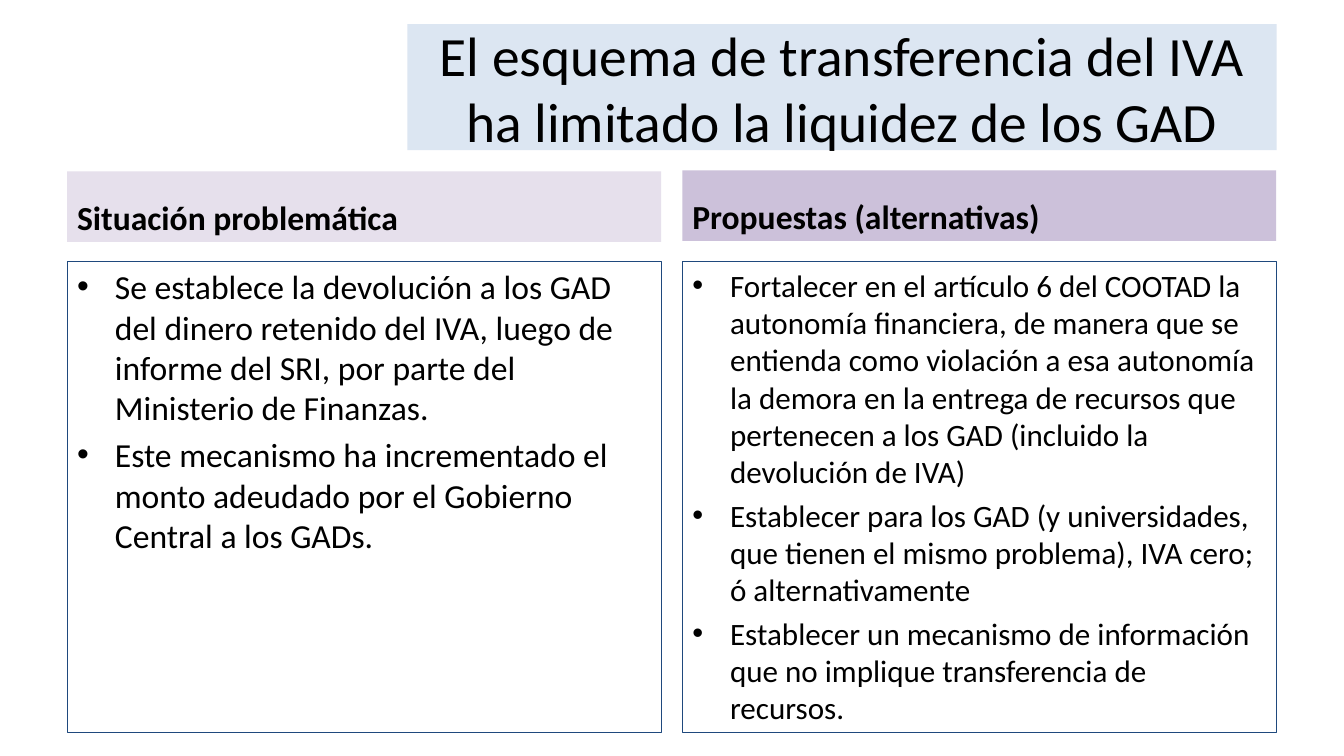
from lxml import etree
from pptx import Presentation
from pptx.dml.color import RGBColor
from pptx.enum.shapes import MSO_SHAPE
from pptx.enum.text import MSO_ANCHOR, PP_ALIGN
from pptx.oxml.ns import qn
from pptx.util import Pt

RECT = MSO_SHAPE.RECTANGLE
TOP, MIDDLE, BOTTOM = MSO_ANCHOR.TOP, MSO_ANCHOR.MIDDLE, MSO_ANCHOR.BOTTOM
LEFT, CENTER = PP_ALIGN.LEFT, PP_ALIGN.CENTER

# Content
TITLE = "El esquema de transferencia del IVA ha limitado la liquidez de los GAD"
COLUMNS = [
    {
        "head": "Situación problemática",
        "fill": "lilac",
        "top": 122.4,
        "size": "body",
        "items": [
            "Se establece la devolución a los GAD del dinero retenido del IVA, "
            "luego de informe del SRI, por parte del Ministerio de Finanzas.",
            "Este mecanismo ha incrementado el monto adeudado por el Gobierno "
            "Central a los GADs.",
        ],
    },
    {
        "head": "Propuestas (alternativas)",
        "fill": "purple",
        "top": 121.7,
        "size": "dense",
        "items": [
            "Fortalecer en el artículo 6 del COOTAD la autonomía financiera, de "
            "manera que se entienda como violación a esa autonomía la demora en "
            "la entrega de recursos que pertenecen a los GAD (incluido la "
            "devolución de IVA)",
            "Establecer para los GAD (y universidades, que tienen el mismo "
            "problema), IVA cero; ó alternativamente",
            "Establecer un mecanismo de información que no implique "
            "transferencia de recursos.",
        ],
    },
]

# Theme
THEME = {
    "font": "Calibri",
    "color": {"ink": "000000", "sky": "DCE6F2", "lilac": "E6E0EC",
              "purple": "CCC1DA", "navy": "1F497D"},
    "size": {"title": 39.6, "head": 24, "body": 24, "dense": 22.2},
}

# Layout, in points
MARGIN, WIDTH, PITCH = 48, 424.2, 439.4
HEAD_H, BODY_TOP, BODY_H = 50.4, 186.6, 336.9
INDENT = 27


def color(name):
    return RGBColor.from_string(THEME["color"][name])


def add_bullet(para):
    props = para._p.get_or_add_pPr()
    props.set("marL", str(Pt(INDENT)))
    props.set("indent", str(-Pt(INDENT)))
    font = etree.SubElement(props, qn("a:buFont"))
    font.set("typeface", "Arial")
    etree.SubElement(props, qn("a:buChar")).set("char", "•")


def add_text(slide, box, lines, size, fill=None, line=None, anchor=TOP,
             align=LEFT, bold=False, bullet=False):
    shape = slide.shapes.add_shape(RECT, *[Pt(v) for v in box])
    shape.shadow.inherit = False
    if fill:
        shape.fill.solid()
        shape.fill.fore_color.rgb = color(fill)
    else:
        shape.fill.background()
    if line:
        shape.line.color.rgb = color(line)
        shape.line.width = Pt(0.75)
    else:
        shape.line.fill.background()
    frame = shape.text_frame
    frame.word_wrap = True
    frame.vertical_anchor = anchor
    points = THEME["size"][size]
    for i, text in enumerate(lines):
        para = frame.paragraphs[0] if i == 0 else frame.add_paragraph()
        para.alignment = align
        if i:
            para.space_before = Pt(round(points * 0.2, 1))
        if bullet:
            add_bullet(para)
        run = para.add_run()
        run.text = text
        run.font.name = THEME["font"]
        run.font.size = Pt(points)
        run.font.bold = bold
        run.font.color.rgb = color("ink")


def main():
    deck = Presentation()
    deck.slide_width, deck.slide_height = Pt(960), Pt(540)
    slide = deck.slides.add_slide(deck.slide_layouts[6])

    # Title
    add_text(slide, (291, 17.2, 620.9, 90), [TITLE], "title", fill="sky",
             anchor=MIDDLE, align=CENTER)

    # Two columns: heading above a bulleted box
    for i, col in enumerate(COLUMNS):
        left = MARGIN + i * PITCH
        add_text(slide, (left, col["top"], WIDTH, HEAD_H), [col["head"]],
                 "head", fill=col["fill"], anchor=BOTTOM, bold=True)
        add_text(slide, (left, BODY_TOP, WIDTH, BODY_H), col["items"],
                 col["size"], line="navy", bullet=True)

    deck.save("out.pptx")


if __name__ == "__main__":
    main()
